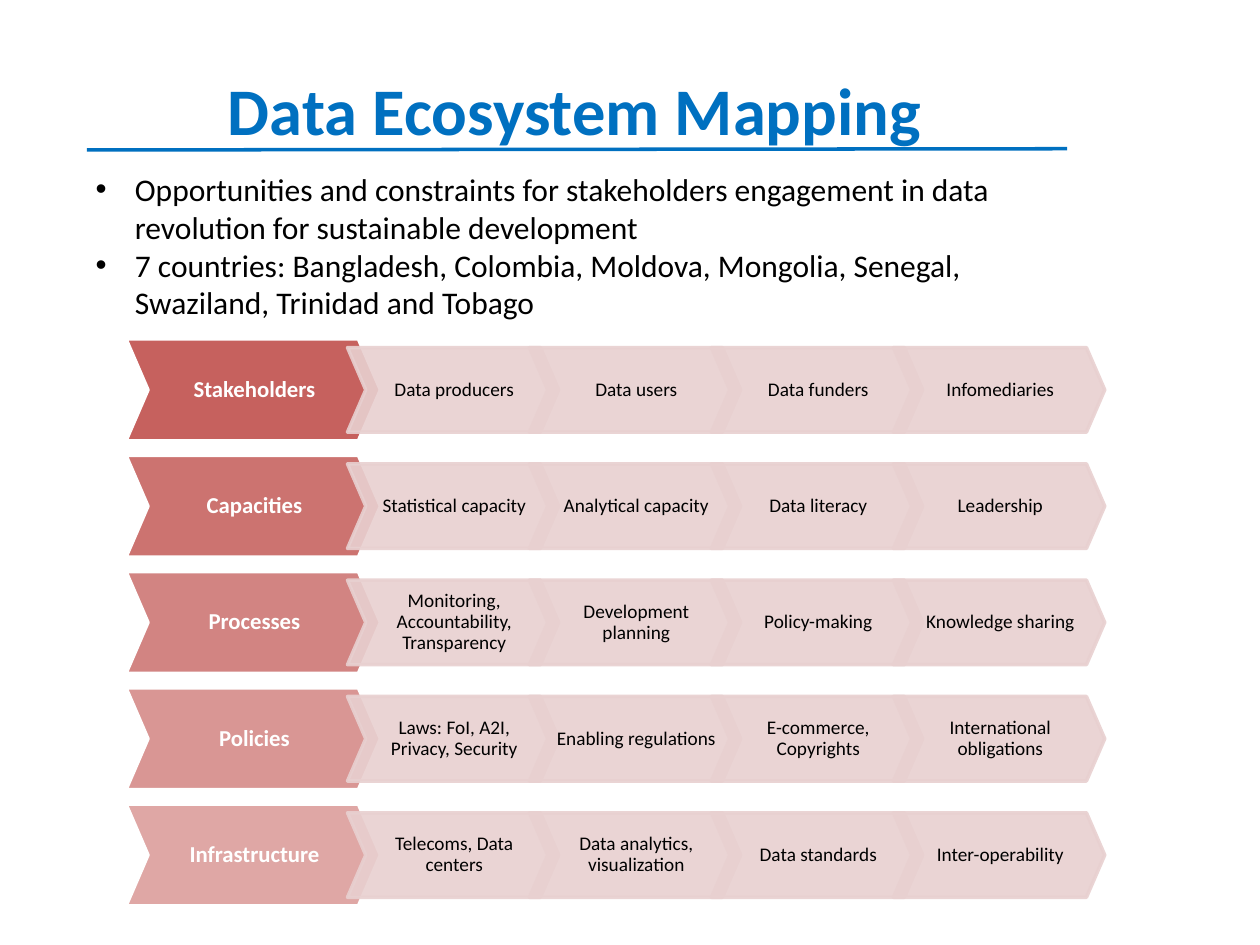
from lxml import etree
from pptx import Presentation
from pptx import util as u
from pptx.dml.color import RGBColor
from pptx.enum import shapes, text
from pptx.oxml.ns import qn

Pt = u.Pt
BLUE = RGBColor(0x00, 0x70, 0xC0)
RED = RGBColor(0xC0, 0x50, 0x4D)
PINK = RGBColor(0xE8, 0xD0, 0xD0)
WHITE = RGBColor(0xFF, 0xFF, 0xFF)
BLACK = RGBColor(0x00, 0x00, 0x00)

BULLETS = [
    "Opportunities and constraints for stakeholders engagement in data "
    "revolution for sustainable development",
    "7 countries: Bangladesh, Colombia, Moldova, Mongolia, Senegal, "
    "Swaziland, Trinidad and Tobago",
]
ECOSYSTEM = {
    "Stakeholders": ["Data producers", "Data users", "Data funders", "Infomediaries"],
    "Capacities": ["Statistical capacity", "Analytical capacity", "Data literacy",
                   "Leadership"],
    "Processes": ["Monitoring, Accountability, Transparency", "Development planning",
                  "Policy-making", "Knowledge sharing"],
    "Policies": ["Laws: FoI, A2I, Privacy, Security", "Enabling regulations",
                 "E-commerce, Copyrights", "International obligations"],
    "Infrastructure": ["Telecoms, Data centers", "Data analytics, visualization",
                       "Data standards", "Inter-operability"],
}


def write(paragraph, words, size, color, bold=False):
    paragraph.text = words
    font = paragraph.font
    for name, value in {"name": "Calibri", "size": Pt(size), "bold": bold}.items():
        setattr(font, name, value)
    font.color.rgb = color


def add_chevron(left, middle, width, height, fill, line, opacity, line_opacity):
    chevron = slide.shapes.add_shape(
        shapes.MSO_SHAPE.CHEVRON, Pt(left), Pt(middle - height / 2), Pt(width), Pt(height))
    chevron.adjustments[0] = 0.216
    chevron.shadow.inherit = False
    chevron.fill.solid()
    chevron.fill.fore_color.rgb = fill
    chevron.line.color.rgb = line
    chevron.line.width = Pt(2)
    # Opacity of the fill, then of the outline
    colors = chevron.element.spPr.iter(qn("a:srgbClr"))
    for color, percent in zip(list(colors), (opacity, line_opacity)):
        if percent < 100:
            etree.SubElement(color, qn("a:alpha"), val=str(percent * 1000))
    frame = chevron.text_frame
    frame_format = {
        "margin_left": Pt(1.4), "margin_right": 0, "margin_top": Pt(0.7),
        "margin_bottom": Pt(0.7), "word_wrap": True,
        "vertical_anchor": text.MSO_ANCHOR.MIDDLE,
    }
    for name, value in frame_format.items():
        setattr(frame, name, value)
    label = frame.paragraphs[0]
    label.alignment = text.PP_ALIGN.CENTER
    label.line_spacing = 0.9
    return label


deck = Presentation()
deck.slide_width, deck.slide_height = Pt(720), Pt(540)
slide = deck.slides.add_slide(deck.slide_layouts[6])

# Title
title = slide.shapes.add_textbox(Pt(46.8), Pt(36), Pt(563), Pt(40.3)).text_frame
title.word_wrap = True
title.paragraphs[0].alignment = text.PP_ALIGN.CENTER
write(title.paragraphs[0], "Data Ecosystem Mapping", 38, BLUE, bold=True)

# Introductory bullets
intro = slide.shapes.add_textbox(Pt(47.5), Pt(93.6), Pt(576.7), Pt(73.4)).text_frame
intro.word_wrap = True
for number, sentence in enumerate(BULLETS):
    point = intro.add_paragraph() if number else intro.paragraphs[0]
    properties = point._p.get_or_add_pPr()
    properties.set("marL", str(Pt(22.5)))
    properties.set("indent", str(-Pt(22.5)))
    etree.SubElement(properties, qn("a:buFont"), typeface="Arial")
    etree.SubElement(properties, qn("a:buChar"), char="•")
    write(point, sentence, 18, BLACK)

# Rule under the title
rule = slide.shapes.add_connector(
    shapes.MSO_CONNECTOR.STRAIGHT, Pt(609.8), Pt(85), Pt(49.7), Pt(85.7))
rule.line.color.rgb = BLUE
rule.line.width = Pt(2)
etree.SubElement(rule.element.spPr, qn("a:effectLst"))

# One row per dimension: a heading chevron that fades downwards, then its elements
for row, (dimension, elements) in enumerate(ECOSYSTEM.items()):
    middle = 222.8 + row * 66.45
    heading = add_chevron(72, middle, 145.4, 58.2, RED, WHITE, 90 - 10 * row, 100)
    write(heading, dimension, 13, WHITE, bold=True)
    for column, element in enumerate(elements):
        label = add_chevron(198.6 + column * 104, middle, 120.7, 48.3, PINK, PINK, 90, 90)
        write(label, element, 11, BLACK)

deck.save("out.pptx")
